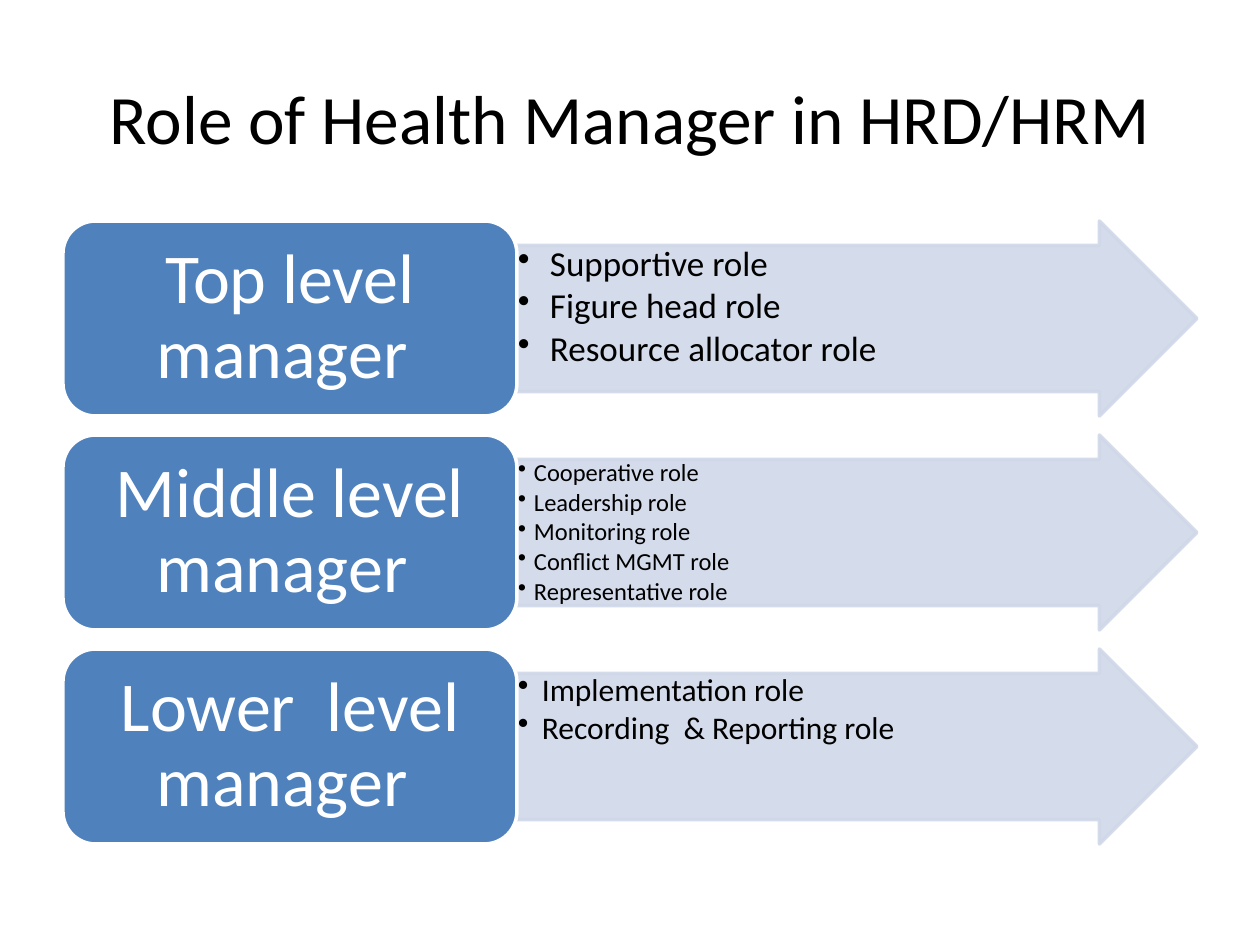
from dataclasses import dataclass

from lxml.etree import SubElement
from pptx import Presentation
from pptx.dml.color import RGBColor
from pptx.enum.shapes import MSO_SHAPE
from pptx.enum.text import MSO_ANCHOR, PP_ALIGN
from pptx.oxml.ns import qn
from pptx.shapes.autoshape import Shape
from pptx.slide import Slide
from pptx.text.text import TextFrame
from pptx.util import Emu, Pt

EMU_PER_PX = 914400 / 126
FONT = "Calibri"
BLACK, WHITE = "000000", "FFFFFF"
BLUE, PALE_BLUE = "4F81BD", "D0D8E8"
LEFT, TOP, ROW_HEIGHT, ROW_PITCH = 63, 221, 195, 214
BOX_WIDTH, ARROW_WIDTH = 454, 680


@dataclass(frozen=True)
class Level:
    name: str
    roles: tuple[str, ...]
    size: int
    indent: int


LEVELS = (
    Level("Top level manager ",
          ("Supportive role", "Figure head role", "Resource allocator role"), 20, 32),
    Level("Middle level manager ",
          ("Cooperative role", "Leadership role", "Monitoring role",
           "Conflict MGMT role", "Representative role"), 14, 16),
    Level("Lower  level manager ",
          ("Implementation role", "Recording  & Reporting role"), 18, 24),
)


def px(length: int) -> Emu:
    return Emu(round(length * EMU_PER_PX))


def color(value: str) -> RGBColor:
    return RGBColor.from_string(value)


def set_insets(frame: TextFrame, horizontal: int, vertical: int) -> None:
    frame.margin_left = frame.margin_right = px(horizontal)
    frame.margin_top = frame.margin_bottom = px(vertical)


def write(frame: TextFrame, lines: tuple[str, ...], size: float, text_color: str,
          align: PP_ALIGN, anchor: MSO_ANCHOR) -> None:
    frame.word_wrap = True
    frame.vertical_anchor = anchor
    for index, line in enumerate(lines):
        paragraph = frame.paragraphs[0] if index == 0 else frame.add_paragraph()
        paragraph.text = line
        paragraph.alignment = align
        paragraph.font.name = FONT
        paragraph.font.size = Pt(size)
        paragraph.font.color.rgb = color(text_color)


def add_panel(slide: Slide, kind: MSO_SHAPE, left: int, top: int, width: int,
              fill: str, line: str) -> Shape:
    shape = slide.shapes.add_shape(kind, px(left), px(top), px(width), px(ROW_HEIGHT))
    shape.shadow.inherit = False
    shape.fill.solid()
    shape.fill.fore_color.rgb = color(fill)
    shape.line.color.rgb = color(line)
    shape.line.width = Pt(2)
    return shape


def add_title(slide: Slide, title: str) -> None:
    box = slide.shapes.add_textbox(px(63), px(38), px(1134), px(157))
    write(box.text_frame, (title,), 39.6, BLACK, PP_ALIGN.CENTER, MSO_ANCHOR.MIDDLE)


def add_roles(slide: Slide, level: Level, top: int) -> None:
    arrow = add_panel(slide, MSO_SHAPE.RIGHT_ARROW, LEFT + BOX_WIDTH, top,
                      ARROW_WIDTH, PALE_BLUE, PALE_BLUE)
    arrow.adjustments[0] = 0.75
    for fill_color in arrow._element.spPr.iter(qn("a:srgbClr")):
        SubElement(fill_color, qn("a:alpha"), val="90000")
    frame = arrow.text_frame
    set_insets(frame, 1, 1)
    write(frame, level.roles, level.size, BLACK, PP_ALIGN.LEFT, MSO_ANCHOR.TOP)
    for paragraph in frame.paragraphs:
        paragraph.line_spacing = 0.9
        paragraph.space_after = Pt(round(level.size * 0.13, 1))
        properties = paragraph._p.get_or_add_pPr()
        properties.set("marL", str(px(level.indent)))
        properties.set("indent", str(-px(level.indent)))
        bullet = properties.makeelement(qn("a:buChar"), {"char": "•"})
        properties.find(qn("a:defRPr")).addprevious(bullet)


def add_name(slide: Slide, level: Level, top: int) -> None:
    box = add_panel(slide, MSO_SHAPE.ROUNDED_RECTANGLE, LEFT, top, BOX_WIDTH, BLUE, WHITE)
    set_insets(box.text_frame, 21, 10)
    write(box.text_frame, (level.name,), 40, WHITE, PP_ALIGN.CENTER, MSO_ANCHOR.MIDDLE)
    box.text_frame.paragraphs[0].line_spacing = 0.9


def main() -> None:
    """Build the slide of manager levels and their roles."""
    presentation = Presentation()
    presentation.slide_width, presentation.slide_height = px(1260), px(945)
    slide = presentation.slides.add_slide(presentation.slide_layouts[6])
    add_title(slide, "Role of Health Manager in HRD/HRM")
    for row, level in enumerate(LEVELS):
        top = TOP + row * ROW_PITCH
        add_roles(slide, level, top)
        add_name(slide, level, top)
    presentation.save("out.pptx")


if __name__ == "__main__":
    main()
